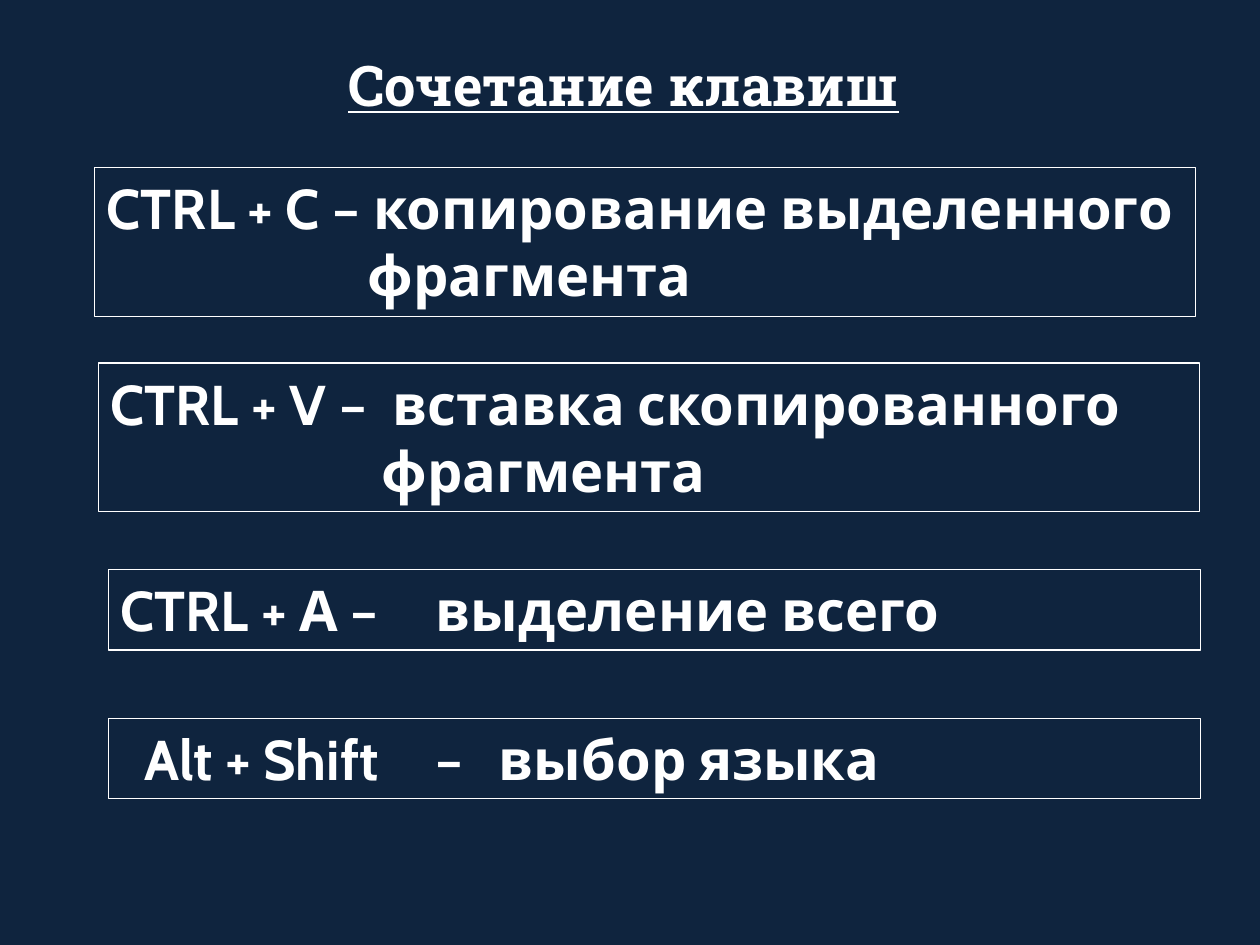
from lxml import etree
from pptx import Presentation
from pptx import util as u
from pptx.dml.color import RGBColor
from pptx.enum import shapes, text
from pptx.oxml.ns import qn

COLORS = {"night": "0F243E", "white": "FFFFFF"}

deck = Presentation()
deck.slide_width, deck.slide_height = u.Inches(10), u.Inches(7.5)
col, row = deck.slide_width / 100, deck.slide_height / 100

slide = deck.slides.add_slide(deck.slide_layouts[5])
slide.background.fill.solid()
slide.background.fill.fore_color.rgb = RGBColor.from_string(COLORS["night"])


def place(holder, left, top, width, height):
    holder.left, holder.top = u.Emu(int(left * col)), u.Emu(int(top * row))
    holder.width, holder.height = u.Emu(int(width * col)), u.Emu(int(height * row))


def write(holder, words, font, align):
    frame = holder.text_frame
    frame.word_wrap = True
    frame.auto_size = text.MSO_AUTO_SIZE.SHAPE_TO_FIT_TEXT
    frame.vertical_anchor = text.MSO_ANCHOR.TOP
    line = frame.paragraphs[0]
    line.alignment = align
    run = line.add_run()
    run.text = words
    run.font.name, run.font.size, run.font.bold = font, u.Pt(32), True
    run.font.color.rgb = RGBColor.from_string(COLORS["white"])
    return line


heading = slide.shapes.title
place(heading, 25.6, 4.67, 47.8, 8.53)
heading_line = write(heading, "Сочетание клавиш", "Roboto Slab", text.PP_ALIGN.CENTER)
heading_line.runs[0].font.underline = True

shortcuts = [
    ("CTRL + C – копирование выделенного  фрагмента", (7.5, 17.73, 87.4, 15.73), 1.97, -1.97, []),
    ("CTRL + V –  вставка скопированного фрагмента", (7.8, 38.4, 87.4, 15.73), 2.15, -2.15, []),
    ("CTRL + А –\tвыделение всего", (8.6, 60.27, 86.7, 8.53), 0, 0, [2.35]),
    ("Alt + Shift\t–\tвыбор языка", (8.6, 76, 86.7, 8.53), 0, 0.19, [2.45, 3.16]),
]

for words, area, margin, indent, stops in shortcuts:
    shortcut = slide.shapes.add_shape(shapes.MSO_SHAPE.RECTANGLE, 0, 0, 0, 0)
    place(shortcut, *area)
    shortcut.shadow.inherit = False
    shortcut.fill.background()
    shortcut.line.color.rgb = RGBColor.from_string(COLORS["white"])
    shortcut.line.width = u.Pt(0.75)
    props = write(shortcut, words, "Cabin", text.PP_ALIGN.LEFT)._p.get_or_add_pPr()
    props.set("marL", str(u.Inches(margin)))
    props.set("indent", str(u.Inches(indent)))
    if stops:
        tabs = etree.SubElement(props, qn("a:tabLst"))
        for stop in stops:
            etree.SubElement(tabs, qn("a:tab"), pos=str(u.Inches(stop)), algn="l")

deck.save("out.pptx")
